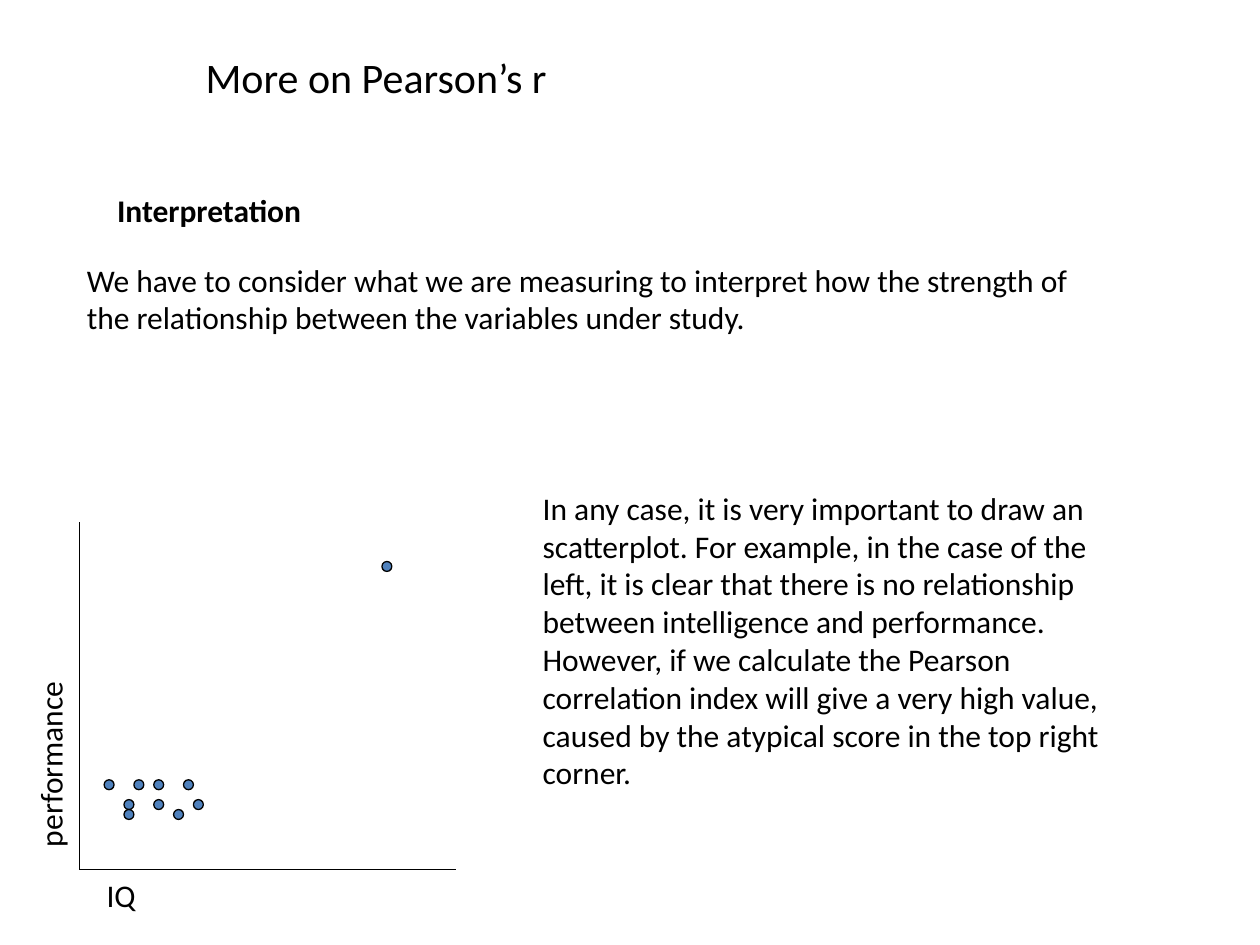
from lxml.etree import SubElement
from pptx import Presentation
from pptx.dml.color import RGBColor
from pptx.enum.shapes import MSO_CONNECTOR as Connector, MSO_SHAPE as Shape
from pptx.enum.text import MSO_ANCHOR as Anchor, MSO_AUTO_SIZE as AutoSize, PP_ALIGN as Align
from pptx.oxml.ns import qn
from pptx.util import Cm, Pt

BLACK, BLUE = "000000", "4F81BD"
FONT = "Calibri"
TITLE = ("More on Pearson’s r", (3.89, 0.91, 20.02, 1.27))
TEXTS = [
    ("Interpretation", (2.11, 3.73, 19.61, 1.02), True, 0),
    ("We have to consider what we are measuring to interpret how the strength of "
     "the relationship between the variables under study.",
     (1.5, 5.13, 20.4, 1.8), False, 0),
    ("performance", (-2.39, 13.41, 6.81, 1.02), False, 270),
    ("IQ", (1.9, 17.53, 6.4, 1.02), False, 0),
    ("In any case, it is very important to draw an scatterplot. For example, in the "
     "case of the left, it is clear that there is no relationship between intelligence "
     "and performance. However, if we calculate the Pearson correlation index will give "
     "a very high value, caused by the atypical score in the top right corner.",
     (10.69, 9.73, 12.6, 6.4), False, 0),
]
ORIGIN, AXIS_TOP, AXIS_RIGHT = (1.6, 17.53), 10.52, 9.19
DOT = 0.2
FIRST_DOT = (2.1, 15.72)
SCORES = [(0, 0), (3, 0), (5, 0), (8, 0), (2, -2), (5, -2), (9, -2),
          (2, -3), (7, -3), (28, 22)]


def color(value):
    return RGBColor.from_string(value)


def write(shape, text, size, bold=False):
    frame = shape.text_frame
    frame.word_wrap = True
    frame.auto_size = AutoSize.NONE
    frame.vertical_anchor = Anchor.TOP
    paragraph = frame.paragraphs[0]
    paragraph.alignment = Align.LEFT
    run = paragraph.add_run()
    run.text = text
    run.font.name = FONT
    run.font.size = Pt(size)
    run.font.bold = bold
    run.font.color.rgb = color(BLACK)


def outline(shape):
    shape.line.color.rgb = color(BLACK)
    shape.line.width = Pt(0.75)


def add_axis(slide, end):
    axis = slide.shapes.add_connector(
        Connector.STRAIGHT, *(Cm(value) for value in ORIGIN + end))
    outline(axis)
    SubElement(axis.element.spPr, qn("a:effectLst"))


def add_dot(slide, column, row):
    left, top = FIRST_DOT[0] + column * DOT, FIRST_DOT[1] - row * DOT
    dot = slide.shapes.add_shape(Shape.OVAL, Cm(left), Cm(top), Cm(DOT), Cm(DOT))
    dot.shadow.inherit = False
    dot.fill.solid()
    dot.fill.fore_color.rgb = color(BLUE)
    outline(dot)


def main():
    """Build the slide on interpreting Pearson's r."""
    presentation = Presentation()
    presentation.slide_width, presentation.slide_height = Cm(25.4), Cm(19.05)
    slide = presentation.slides.add_slide(presentation.slide_layouts[5])

    text, box = TITLE
    title = slide.shapes.title
    title.left, title.top, title.width, title.height = (Cm(value) for value in box)
    write(title, text, 24)

    for text, box, bold, rotation in TEXTS:
        textbox = slide.shapes.add_textbox(*(Cm(value) for value in box))
        textbox.rotation = rotation
        write(textbox, text, 18, bold)

    for end in ((ORIGIN[0], AXIS_TOP), (AXIS_RIGHT, ORIGIN[1])):
        add_axis(slide, end)
    for column, row in SCORES:
        add_dot(slide, column, row)

    presentation.save("out.pptx")


if __name__ == "__main__":
    main()
